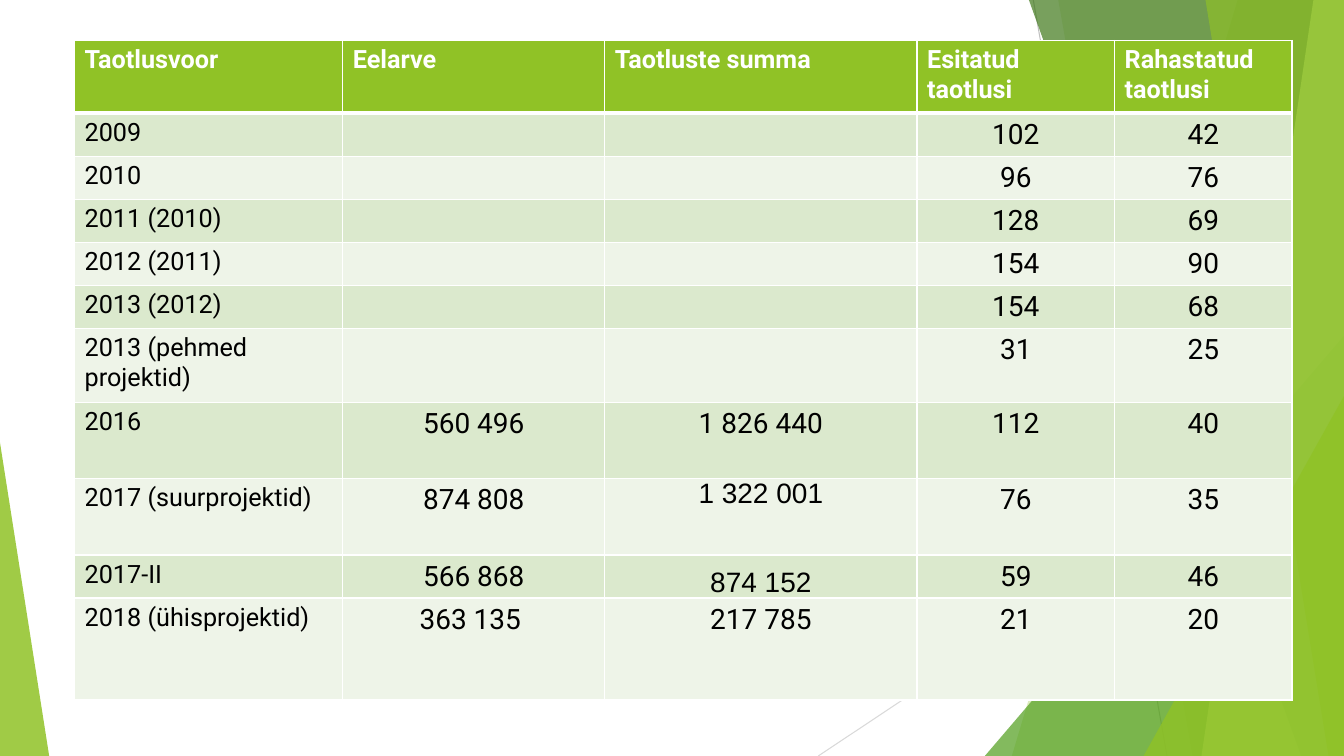
from lxml.etree import SubElement
from pptx import Presentation
from pptx.dml.color import RGBColor as RGB
from pptx.enum.shapes import MSO_CONNECTOR as CONN, MSO_SHAPE as SHAPE
from pptx.enum.text import MSO_ANCHOR as ANCHOR, PP_ALIGN as ALIGN
from pptx.oxml.ns import qn
from pptx.util import Cm, Pt

COLORS = {
    "white": "FFFFFF", "black": "000000", "lime": "90C226", "green": "54A021",
    "forest": "3F7819", "pale": "C0E474", "grey": "BFBFBF", "silver": "D9D9D9",
    "odd": "DBE9CD", "even": "EEF4E8",
}
SLIDE_W, SLIDE_H = 33.87, 19.05
RIGHT_BOX = (20.62, 0, 13.25, SLIDE_H)
LEFT_BOX = (0, 11.15, 1.24, 7.9)
TABLE_BOX = (1.88, 1.02, 30.68, 16.59)

RAYS = [((5.42, 0), (8.79, 19.05), "grey"), ((13.25, 10.24), (0, 19.05), "silver")]
FACETS = [
    ("band", 10.57, 4.88, "lime", 30),
    ("band", 6.05, 9.43, "lime", 20),
    ("triangle", 9.05, 10.59, "green", 72),
    ("band", 5.31, 12.17, "forest", 70),
    ("band", 12.48, 9.66, "pale", 70),
    ("band", 9.76, 12.86, "lime", 65),
    ("triangle", 5.05, 9.07, "lime", 80),
]

COL_WIDTHS = [6.76, 6.6, 7.87, 4.98, 4.47]
ROW_HEIGHTS = [1.83] + [1.08] * 5 + [1.87, 1.91, 1.93, 1.08, 2.57]
ROWS = [
    ("Taotlusvoor", "Eelarve", "Taotluste summa", "Esitatud taotlusi", "Rahastatud taotlusi"),
    ("2009", "", "", "102", "42"),
    ("2010", "", "", "96", "76"),
    ("2011 (2010)", "", "", "128", "69"),
    ("2012 (2011)", "", "", "154", "90"),
    ("2013 (2012)", "", "", "154", "68"),
    ("2013 (pehmed projektid)", "", "", "31", "25"),
    ("2016", "560 496", "1 826 440", "112", "40"),
    ("2017 (suurprojektid)", "874 808", "1 322 001", "76", "35"),
    ("2017-II", "566 868", "874 152", "59", "46"),
    ("2018 (ühisprojektid)", "363 135 ", "217 785", "21", "20"),
]
HEAD = {"name": "Roboto", "size": Pt(18), "bold": True}
LABEL = {"name": "Roboto", "size": Pt(18), "bold": False}
NUMBER = {"name": "Roboto", "size": Pt(20), "bold": False}
ARIAL = {**NUMBER, "name": "Arial"}
TIGHT = dict.fromkeys(("margin_left", "margin_top", "margin_right", "margin_bottom"), 0)
SPECIAL_CELLS = {
    (8, 2): {**TIGHT, "vertical_anchor": ANCHOR.TOP},
    (9, 2): {**TIGHT, "vertical_anchor": ANCHOR.BOTTOM},
}


def rgb(name):
    return RGB.from_string(COLORS[name])


def set_all(obj, values):
    for key, value in values.items():
        setattr(obj, key, value)


def paint(sp, color, opacity):
    sp.shadow.inherit = False
    sp.line.fill.background()
    sp.fill.solid()
    sp.fill.fore_color.rgb = rgb(color)
    clr = sp.fill._xPr.find(qn("a:solidFill"))[0]
    SubElement(clr, qn("a:alpha")).set("val", str(opacity * 1000))


def add_triangle(slide, x, y, w, h, tip, color, opacity):
    sp = slide.shapes.add_shape(SHAPE.ISOSCELES_TRIANGLE, Cm(x), Cm(y), Cm(w), Cm(h))
    sp.adjustments[0] = tip
    paint(sp, color, opacity)


def add_band(slide, box, top, bottom, color, opacity):
    x, y, w, h = box
    points = [(x + w, y), (x + w, y + h), (x + bottom, y + h)]
    fb = slide.shapes.build_freeform(Cm(x + top), Cm(y))
    fb.add_line_segments([(Cm(px), Cm(py)) for px, py in points], close=True)
    paint(fb.convert_to_shape(), color, opacity)


def add_right_facets(slide, box):
    x, y, w, h = box
    for (x1, y1), (x2, y2), color in RAYS:
        ln = slide.shapes.add_connector(
            CONN.STRAIGHT, Cm(x + x1), Cm(y + y1), Cm(x + x2), Cm(y + y2))
        ln.line.color.rgb = rgb(color)
        ln.line.width = Pt(0.75)
        SubElement(ln._element.spPr, qn("a:effectLst"))
    for kind, a, b, color, opacity in FACETS:
        if kind == "band":
            add_band(slide, box, a, b, color, opacity)
        else:
            add_triangle(slide, x + w - a, y + h - b, a, b, 1, color, opacity)


def add_left_facet(slide, box):
    add_triangle(slide, *box, 0, "lime", 85)


def add_borders(cell, row):
    tcPr = cell._tc.get_or_add_tcPr()
    thick = {0: "lnB", 1: "lnT"}.get(row)
    for side in ("lnL", "lnR", "lnT", "lnB"):
        ln = SubElement(tcPr, qn(f"a:{side}"))
        ln.set("w", str(Pt(3 if side == thick else 1)))
        fill = SubElement(ln, qn("a:solidFill"))
        SubElement(fill, qn("a:srgbClr")).set("val", COLORS["white"])


def fill_cell(cell, row, col, text):
    add_borders(cell, row)
    cell.fill.solid()
    cell.fill.fore_color.rgb = rgb("lime" if row == 0 else "odd" if row % 2 else "even")
    special = SPECIAL_CELLS.get((row, col), {})
    set_all(cell, special)
    if not text:
        return
    p = cell.text_frame.paragraphs[0]
    r = p.add_run()
    r.text = text
    if row and col:
        p.alignment = ALIGN.CENTER
    font = HEAD if row == 0 else LABEL if col == 0 else ARIAL if special else NUMBER
    set_all(r.font, font)
    r.font.color.rgb = rgb("black" if row else "white")


def add_rounds_table(slide, box):
    shape = slide.shapes.add_table(len(ROWS), len(COL_WIDTHS), *map(Cm, box))
    table = shape.table
    for column, width in zip(table.columns, COL_WIDTHS):
        column.width = Cm(width)
    for i, (height, texts) in enumerate(zip(ROW_HEIGHTS, ROWS)):
        table.rows[i].height = Cm(height)
        for j, text in enumerate(texts):
            fill_cell(table.cell(i, j), i, j, text)


def main():
    prs = Presentation()
    prs.slide_width, prs.slide_height = Cm(SLIDE_W), Cm(SLIDE_H)
    slide = prs.slides.add_slide(prs.slide_layouts[6])
    add_right_facets(slide, RIGHT_BOX)
    add_left_facet(slide, LEFT_BOX)
    add_rounds_table(slide, TABLE_BOX)
    prs.save("out.pptx")


if __name__ == "__main__":
    main()
